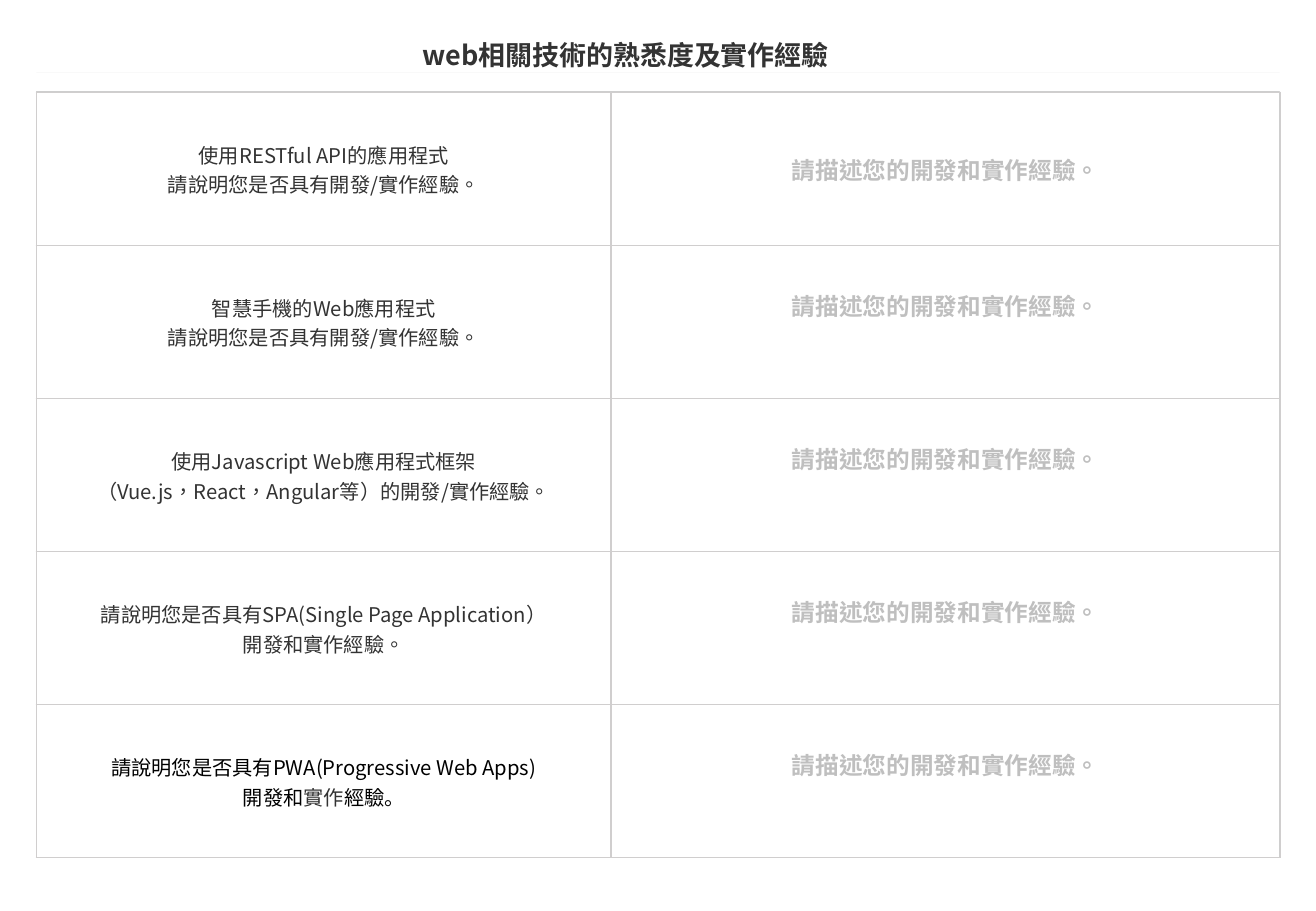
from dataclasses import dataclass
from itertools import groupby

from lxml.etree import SubElement
from pptx import Presentation
from pptx.dml.color import RGBColor
from pptx.enum.lang import MSO_LANGUAGE_ID
from pptx.enum.shapes import MSO_CONNECTOR, MSO_SHAPE
from pptx.enum.text import MSO_ANCHOR, MSO_AUTO_SIZE, PP_ALIGN
from pptx.oxml.ns import qn
from pptx.util import Inches, Pt


@dataclass(frozen=True)
class Theme:
    font: str = "Noto Sans CJK JP"
    text: str = "333333"
    strong: str = "000000"
    hint: str = "BFBFBF"
    frame: str = "CECECE"
    border: str = "D0CECE"
    title_size: int = 16
    question_size: int = 12
    hint_size: int = 14


THEME = Theme()
WIDTH, HEIGHT = 10.83, 7.5
LEFT, TOP = 0.3, 0.76
COLUMNS = (4.73, 5.51)
FRAME_WIDTH = 10.23
ROW = 1.26
INSET = 0.01
RAISED_INSET = 0.28  # lifts the hint above the middle of its row

TITLE = "web相關技術的熟悉度及實作經驗"
HINT = "請描述您的開發和實作經驗。"
EXPLAIN = "請說明您是否具有開發/實作經驗。"
QUESTIONS = (
    ("使用RESTful API的應用程式", EXPLAIN),
    ("智慧手機的Web應用程式", EXPLAIN),
    ("使用Javascript Web應用程式框架",
     "（Vue.js，React，Angular等）的開發/實作經驗。"),
    ("請說明您是否具有SPA(Single Page Application）", "開發和實作經驗。"),
)
PWA_QUESTION = "請說明您是否具有PWA(Progressive Web Apps)"
PWA_RUNS = (("開發和", THEME.strong), ("實作", THEME.text),
            ("經驗。", THEME.strong))


def style(p, size, color, bold=False, align=PP_ALIGN.CENTER,
          language=MSO_LANGUAGE_ID.TRADITIONAL_CHINESE):
    p.alignment = align
    font = p.font
    font.name, font.size, font.bold = THEME.font, Pt(size), bold
    font.color.rgb = RGBColor.from_string(color)
    font.language_id = language
    defaults = p._p.pPr.find(qn("a:defRPr"))
    SubElement(defaults, qn("a:ea"), typeface=THEME.font)


def add_title(s):
    title = s.shapes.title
    title.left, title.top = Inches(3.38), Inches(0.27)
    title.width, title.height = Inches(WIDTH / 3), Inches(0.64)
    tf = title.text_frame
    tf.word_wrap = False
    tf.auto_size = MSO_AUTO_SIZE.SHAPE_TO_FIT_TEXT
    tf.vertical_anchor = MSO_ANCHOR.TOP
    tf.text = TITLE
    style(tf.paragraphs[0], THEME.title_size, THEME.text, True, PP_ALIGN.LEFT)


def add_title_rule(s):
    y = Inches(HEIGHT * 0.08)
    rule = s.shapes.add_connector(MSO_CONNECTOR.STRAIGHT, Inches(LEFT), y,
                                  Inches(LEFT + FRAME_WIDTH), y)
    rule.line.width = Pt(0.1)
    rule.line.color.rgb = RGBColor.from_string(THEME.strong)
    color = rule._element.spPr.find(".//" + qn("a:srgbClr"))
    SubElement(color, qn("a:alpha"), val="20000")
    SubElement(rule._element.spPr, qn("a:effectLst"))


def add_frame(s, rows):
    frame = s.shapes.add_shape(MSO_SHAPE.RECTANGLE, Inches(LEFT), Inches(TOP),
                               Inches(FRAME_WIDTH), Inches(rows * ROW))
    frame.shadow.inherit = False
    frame.fill.background()
    frame.line.color.rgb = RGBColor.from_string(THEME.frame)
    frame.line.width = Pt(1)


def format_cell(cell, bottom):
    cell.vertical_anchor = MSO_ANCHOR.MIDDLE
    cell.margin_left = cell.margin_right = cell.margin_top = Inches(INSET)
    cell.margin_bottom = Inches(bottom)
    properties = cell._tc.get_or_add_tcPr()
    for side in "LRTB":
        line = SubElement(properties, qn(f"a:ln{side}"), w=str(Pt(1)))
        fill = SubElement(line, qn("a:solidFill"))
        SubElement(fill, qn("a:srgbClr"), val=THEME.border)
    cell.fill.background()


def fill_question(cell, lines):
    """Write the lines, with full-width commas set low as in Japanese."""
    tf = cell.text_frame
    for i, line in enumerate(lines):
        p = tf.add_paragraph() if i else tf.paragraphs[0]
        style(p, THEME.question_size, THEME.text)
        for is_comma, chars in groupby(line, lambda char: char == "，"):
            r = p.add_run()
            r.text = "".join(chars)
            if is_comma:
                r.font.language_id = MSO_LANGUAGE_ID.JAPANESE


def fill_pwa_question(cell):
    tf = cell.text_frame
    tf.text = PWA_QUESTION
    style(tf.paragraphs[0], THEME.question_size, THEME.strong)
    p = tf.add_paragraph()
    style(p, THEME.question_size, THEME.strong,
          language=MSO_LANGUAGE_ID.JAPANESE)
    for text, color in PWA_RUNS:
        r = p.add_run()
        r.text = text
        r.font.color.rgb = RGBColor.from_string(color)


def add_question_table(s, index):
    """Add the one-row table for a question and return its question cell."""
    table = s.shapes.add_table(1, len(COLUMNS), Inches(LEFT),
                               Inches(TOP + index * ROW),
                               Inches(sum(COLUMNS)), Inches(ROW)).table
    table.first_row = table.horz_banding = False
    for column, width in zip(table.columns, COLUMNS):
        column.width = Inches(width)
    question, answer = table.rows[0].cells
    format_cell(question, 0)
    format_cell(answer, RAISED_INSET if index else 0)
    answer.text = HINT
    style(answer.text_frame.paragraphs[0], THEME.hint_size, THEME.hint, True)
    return question


def main():
    prs = Presentation()
    prs.slide_width, prs.slide_height = Inches(WIDTH), Inches(HEIGHT)
    s = prs.slides.add_slide(prs.slide_layouts[5])
    add_title(s)
    add_title_rule(s)
    add_frame(s, len(QUESTIONS) + 1)
    for i, lines in enumerate(QUESTIONS):
        fill_question(add_question_table(s, i), lines)
    fill_pwa_question(add_question_table(s, len(QUESTIONS)))
    prs.save("out.pptx")


if __name__ == "__main__":
    main()
